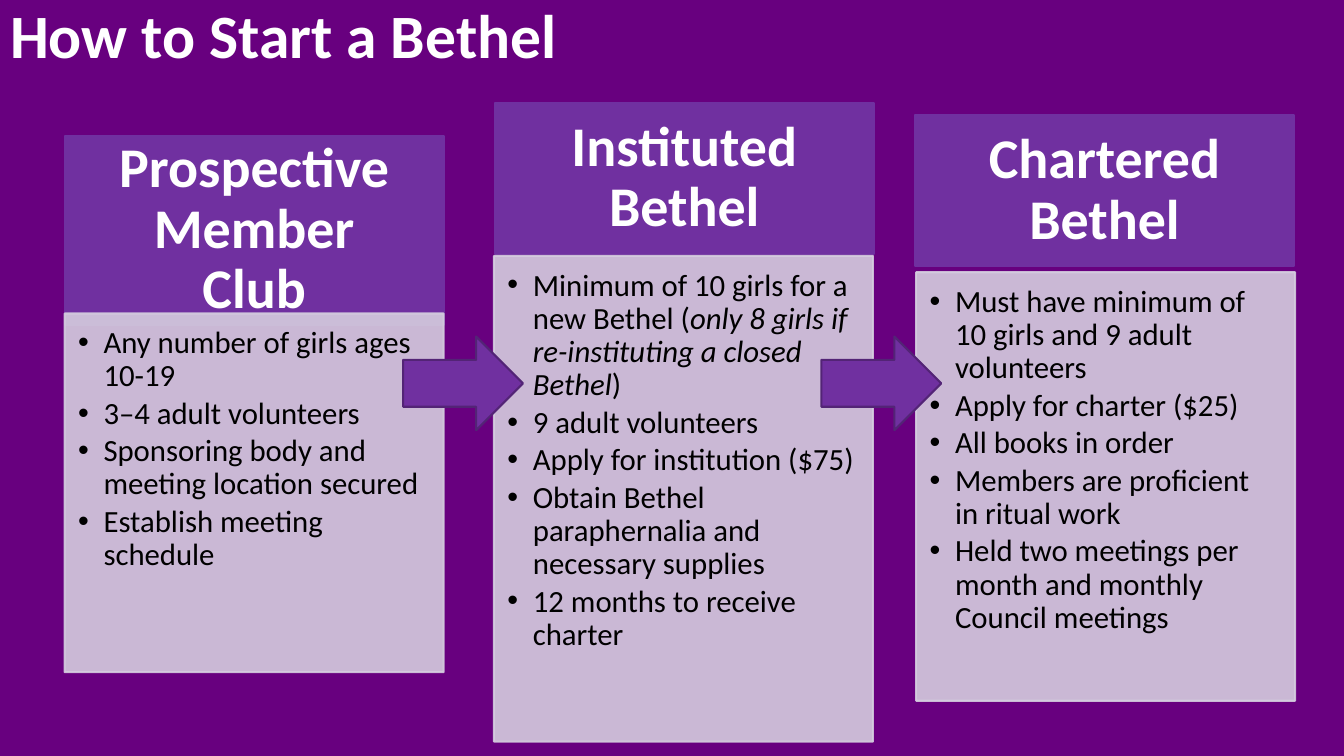
from lxml.etree import SubElement
from pptx import Presentation
from pptx.dml.color import RGBColor
from pptx.enum.shapes import MSO_SHAPE
from pptx.enum.text import MSO_ANCHOR, MSO_AUTO_SIZE, PP_ALIGN
from pptx.oxml.ns import qn
from pptx.util import Cm, Pt


def add_block(kind, left, top, width, height, fill, line):
    block = slide.shapes.add_shape(kind, Cm(left), Cm(top), Cm(width), Cm(height))
    block.shadow.inherit = False
    block.fill.solid()
    block.fill.fore_color.rgb = RGBColor.from_string(fill)
    block.line.color.rgb = RGBColor.from_string(line)
    block.line.width = Pt(1.5)
    return block


def add_run(paragraph, text, size, color, bold=False, italic=False):
    run = paragraph.add_run()
    run.text = text
    run.font.name = "Calibri"
    run.font.size = Pt(size)
    run.font.bold = bold
    run.font.italic = italic
    run.font.color.rgb = RGBColor.from_string(color)


PURPLE = "7030A0"
LILAC = "D5CDDF"
WHITE = "FFFFFF"
STAGE_WIDTH = 9.55

stages = [
    ("Prospective Member Club", (1.63, 3.43, 4.75), (1.63, 7.9, 9.04), [
        ["Any number of girls ages 10-19"],
        ["3–4 adult volunteers"],
        ["Sponsoring body and meeting location secured"],
        ["Establish meeting schedule"],
    ]),
    ("Instituted Bethel", (12.47, 2.59, 3.81), (12.45, 6.45, 12.24), [
        ["Minimum of 10 girls for a new Bethel (",
         "only 8 girls if re-instituting a closed Bethel", ")"],
        ["9 adult volunteers"],
        ["Apply for institution ($75)"],
        ["Obtain Bethel paraphernalia and necessary supplies"],
        ["12 months to receive charter"],
    ]),
    ("Chartered Bethel", (23.06, 2.9, 3.81), (23.09, 6.86, 10.8), [
        ["Must have minimum of 10 girls and 9 adult volunteers"],
        ["Apply for charter ($25)"],
        ["All books in order"],
        ["Members are proficient in ritual work"],
        ["Held two meetings per month and monthly Council meetings"],
    ]),
]

presentation = Presentation()
presentation.slide_width = Cm(33.87)
presentation.slide_height = Cm(19.05)
slide = presentation.slides.add_slide(presentation.slide_layouts[5])
slide.background.fill.solid()
slide.background.fill.fore_color.rgb = RGBColor.from_string("68007F")

title = slide.shapes.title
title.left, title.top, title.width, title.height = Cm(0), Cm(0), Cm(33.87), Cm(1.93)
title.text_frame.auto_size = MSO_AUTO_SIZE.NONE
title.text_frame.vertical_anchor = MSO_ANCHOR.MIDDLE
title_line = title.text_frame.paragraphs[0]
title_line.alignment = PP_ALIGN.LEFT
title_line.line_spacing = 0.9
add_run(title_line, "How to Start a Bethel", 44, WHITE, bold=True)

for name, (left, top, height), (list_left, list_top, list_height), steps in stages:
    heading = add_block(MSO_SHAPE.RECTANGLE, left, top, STAGE_WIDTH, height, PURPLE, PURPLE)
    heading_text = heading.text_frame
    heading_text.word_wrap = True
    heading_text.vertical_anchor = MSO_ANCHOR.MIDDLE
    heading_text.margin_left = heading_text.margin_right = Cm(0.79)
    heading_text.margin_top = heading_text.margin_bottom = Cm(0.45)
    heading_line = heading_text.paragraphs[0]
    heading_line.alignment = PP_ALIGN.CENTER
    heading_line.line_spacing = 0.9
    add_run(heading_line, name, 40, WHITE, bold=True)

    requirements = add_block(MSO_SHAPE.RECTANGLE, list_left, list_top,
                             STAGE_WIDTH, list_height, LILAC, LILAC)
    for tint in requirements._element.spPr.iter(qn("a:srgbClr")):
        SubElement(tint, qn("a:alpha"), val="90000")
    steps_text = requirements.text_frame
    steps_text.word_wrap = True
    steps_text.vertical_anchor = MSO_ANCHOR.TOP
    steps_text.margin_left = steps_text.margin_top = Cm(0.34)
    steps_text.margin_right = Cm(0.44)
    steps_text.margin_bottom = Cm(0.48)
    for index, pieces in enumerate(steps):
        step = steps_text.add_paragraph() if index else steps_text.paragraphs[0]
        step.alignment = PP_ALIGN.LEFT
        step.line_spacing = 0.9
        step.space_after = Pt(3)
        properties = step._p.get_or_add_pPr()
        properties.set("marL", str(Cm(0.64)))
        properties.set("indent", str(-Cm(0.64)))
        SubElement(properties, qn("a:buFont"), typeface="Arial")
        SubElement(properties, qn("a:buChar"), char="•")
        for position, piece in enumerate(pieces):
            add_run(step, piece, 22, "000000", italic=position % 2 == 1)

for arrow_left in (10.16, 20.7):
    add_block(MSO_SHAPE.RIGHT_ARROW, arrow_left, 8.48, 3.02, 2.36, PURPLE, "532476")

presentation.save("out.pptx")
